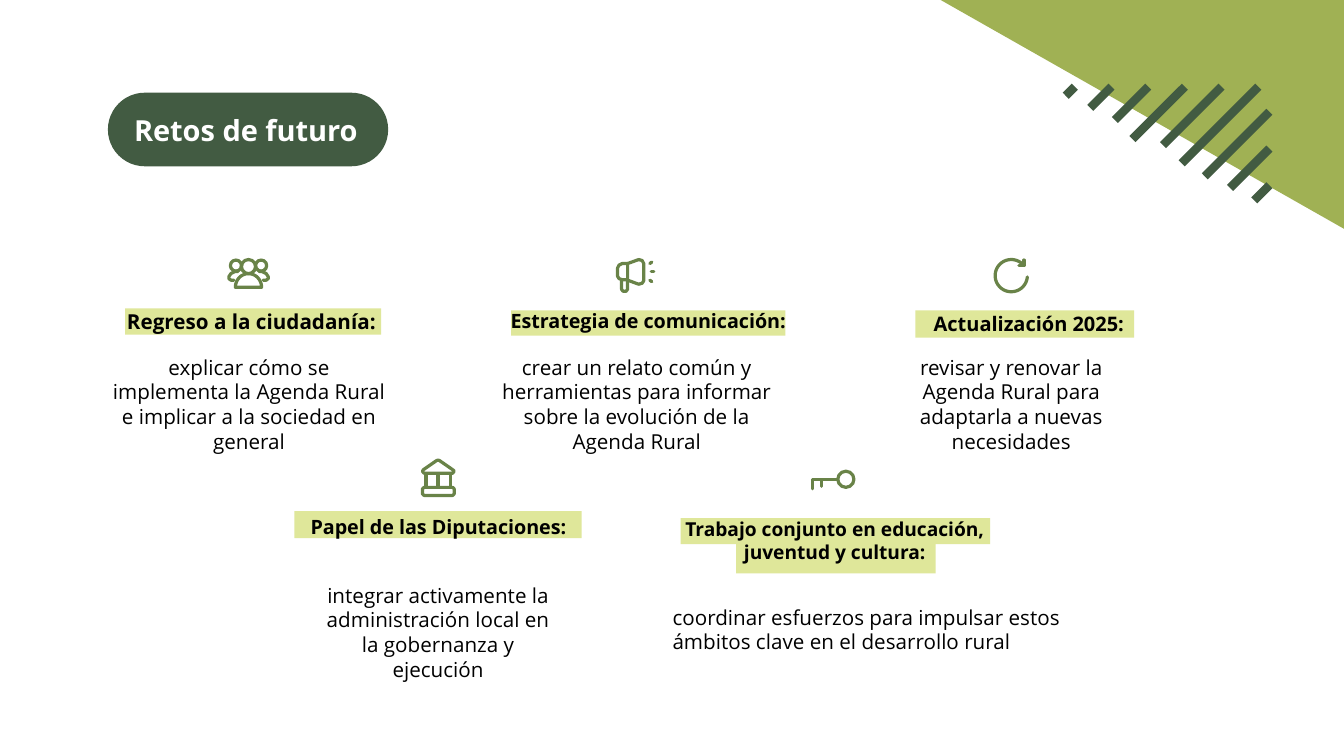
from math import cos, pi, sin

from lxml import etree
from pptx import Presentation
from pptx.dml.color import RGBColor
from pptx.enum.shapes import MSO_SHAPE
from pptx.enum.text import PP_ALIGN
from pptx.oxml.ns import qn
from pptx.util import Inches, Pt

RECT = MSO_SHAPE.RECTANGLE
ROUND = MSO_SHAPE.ROUNDED_RECTANGLE
OVAL = MSO_SHAPE.OVAL
LEFT, MID = PP_ALIGN.LEFT, PP_ALIGN.CENTER
CELL = Inches(0.01)
COLS, ROWS = 1333, 750
DARK, OLIVE, LIME, LEAF = "425B42", "A0B154", "DFE79A", "698348"
WHITE, BLACK = "FFFFFF", "000000"

deck = Presentation()
deck.slide_width, deck.slide_height = Inches(13.33), Inches(7.5)
slide = deck.slides.add_slide(deck.slide_layouts[6])
shapes = slide.shapes


def paint(shape, fill=None, line=None):
    shape.shadow.inherit = False
    if fill:
        shape.fill.solid()
        shape.fill.fore_color.rgb = RGBColor.from_string(fill)
    else:
        shape.fill.background()
    if line:
        shape.line.color.rgb = RGBColor.from_string(line)
        shape.line.width = Pt(2.3)
        pen = shape._element.spPr.get_or_add_ln()
        pen.set("cap", "rnd")
        etree.SubElement(pen, qn("a:round"))
    else:
        shape.line.fill.background()


def trace(dots, close):
    dots = [(x * CELL, y * CELL) for x, y in dots]
    form = shapes.build_freeform(*dots[0], scale=1.0)
    form.add_line_segments(dots[1:], close=close)
    return form.convert_to_shape()


bars = [
    (124, 306, 254, 26),
    (908, 308, 217, 27),
    (507, 308, 272, 25),
    (292, 507, 285, 27),
    (675, 514, 307, 26),
    (730, 539, 198, 30),
]
for box in bars:
    paint(shapes.add_shape(RECT, *[n * CELL for n in box]), LIME)

pill = shapes.add_shape(ROUND, *[n * CELL for n in (107, 92, 278, 73)])
pill.adjustments[0] = 0.5
paint(pill, DARK)

paint(trace([(933, 0), (COLS, 0), (COLS, 227)], True), OLIVE)
STEP, THICK = 36.4, 6
stripes = [(1251 - i * STEP, 83, size) for i, size in enumerate((82, 64, 58, 39, 27, 15))]
stripes += [(1262, 108 + i * STEP, size) for i, size in enumerate((70, 45, 21))]
for right, top, size in stripes:
    left, low = right - size, top + size
    dots = [(left + THICK, low), (right, top + THICK), (right - THICK, top), (left, low - THICK)]
    paint(trace(dots, True), DARK)

rings = [
    (234, 263.5, 5.5),
    (259, 263.5, 5.5),
    (246.5, 264.5, 7),
    (839, 475.5, 8),
]
for x, y, r in rings:
    ring = shapes.add_shape(OVAL, *[int(n * CELL) for n in (x - r, y - r, 2 * r, 2 * r)])
    paint(ring, None, LEAF)

dome = [(246.5 + 13 * cos(pi + pi * i / 24), 285 + 13.5 * sin(pi + pi * i / 24)) for i in range(25)]
turn = [(1003 + 16 * cos(a), 273.5 + 16 * sin(a)) for a in (0.08 + 5.4 * i / 40 for i in range(41))]
arm = [(232, 278), (229, 278), (227, 276.5), (227, 274.5), (229, 271.5), (233, 269.5), (236, 269.5)]
horn = [(622.5, 261.5), (633.5, 257.5), (637, 258.5), (638.5, 261.5),
        (638.5, 278.5), (637, 281), (633.5, 282), (622.5, 278)]
grip = [(622.5, 261.5), (617, 261.5), (614, 263), (612.5, 266),
        (612.5, 274), (614, 276.5), (617, 277.5), (622.5, 277.5)]
stem = [(616.5, 278), (616.5, 287), (618, 289), (621, 289), (622.5, 287), (622.5, 278)]
roof = [(419, 467.5), (420, 466), (433, 457), (434.5, 456.5), (436, 457),
        (449, 466), (450.5, 467.5), (449, 469.5), (420.5, 469.5)]
base = [(419, 485), (420.5, 483.5), (449, 483.5), (450.5, 485),
        (450.5, 490), (449, 491.5), (420.5, 491.5), (419, 490)]
for dots in (dome, horn, roof, base):
    paint(trace(dots, True), None, LEAF)

strokes = [
    arm,
    [(493 - x, y) for x, y in arm],
    turn,
    [(1015.5, 258), (1015.5, 263.5), (1010.5, 263.5)],
    grip,
    stem,
    [(646, 269.5), (648.5, 269.5)],
    [(644.5, 261.5), (646.5, 260)],
    [(644.5, 278), (646.5, 279.5)],
    [(805.5, 485), (805.5, 475.5), (830.5, 475.5)],
    [(814.5, 476), (814.5, 482.5)],
]
strokes += [[(x, 470), (x, 483)] for x in (422.5, 434.5, 446.5)]
for dots in strokes:
    paint(trace(dots, False), None, LEAF)

texts = [
    ("Retos de futuro", (133, 106, 251, 38), 20.7, 28.9, True, LEFT, WHITE),
    ("Regreso a la ciudadanía:", (121, 307, 257, 24), 14.7, 17.6, True, MID, BLACK),
    ("explicar cómo se implementa la Agenda Rural e implicar a la sociedad en general",
     (109, 352, 276, 100), 14.7, 17.6, False, MID, BLACK),
    ("Actualización 2025:", (910, 309, 221, 24), 14.3, 17.2, True, MID, BLACK),
    ("revisar y renovar la Agenda Rural para adaptarla a nuevas necesidades",
     (881, 352, 244, 100), 14.7, 17.6, False, MID, BLACK),
    ("Estrategia de comunicación:", (500, 306, 286, 23), 14.1, 16.9, True, MID, BLACK),
    ("crear un relato común y herramientas para informar sobre la evolución de la Agenda Rural",
     (492, 352, 279, 100), 14.7, 17.6, False, MID, BLACK),
    ("Papel de las Diputaciones:", (285, 511, 300, 23), 14.1, 17, True, MID, BLACK),
    ("integrar activamente la administración local en la gobernanza y ejecución",
     (314, 578, 241, 100), 14.7, 17.6, False, MID, BLACK),
    ("Trabajo conjunto en educación, juventud y cultura:",
     (671, 513, 314, 45), 13.7, 16.4, True, MID, BLACK),
    ("coordinar esfuerzos para impulsar estos ámbitos clave en el desarrollo rural",
     (667, 600, 389, 49), 14.7, 17.6, False, LEFT, BLACK),
]
for words, box, size, lead, bold, side, hue in texts:
    frame = shapes.add_textbox(*[n * CELL for n in box]).text_frame
    frame.word_wrap = True
    frame.margin_left = frame.margin_right = frame.margin_top = frame.margin_bottom = 0
    frame.text = words
    para = frame.paragraphs[0]
    para.alignment = side
    para.line_spacing = Pt(lead)
    font = para.runs[0].font
    font.name, font.size, font.bold = "Open Sans", Pt(size), bold
    font.color.rgb = RGBColor.from_string(hue)

deck.save("out.pptx")
